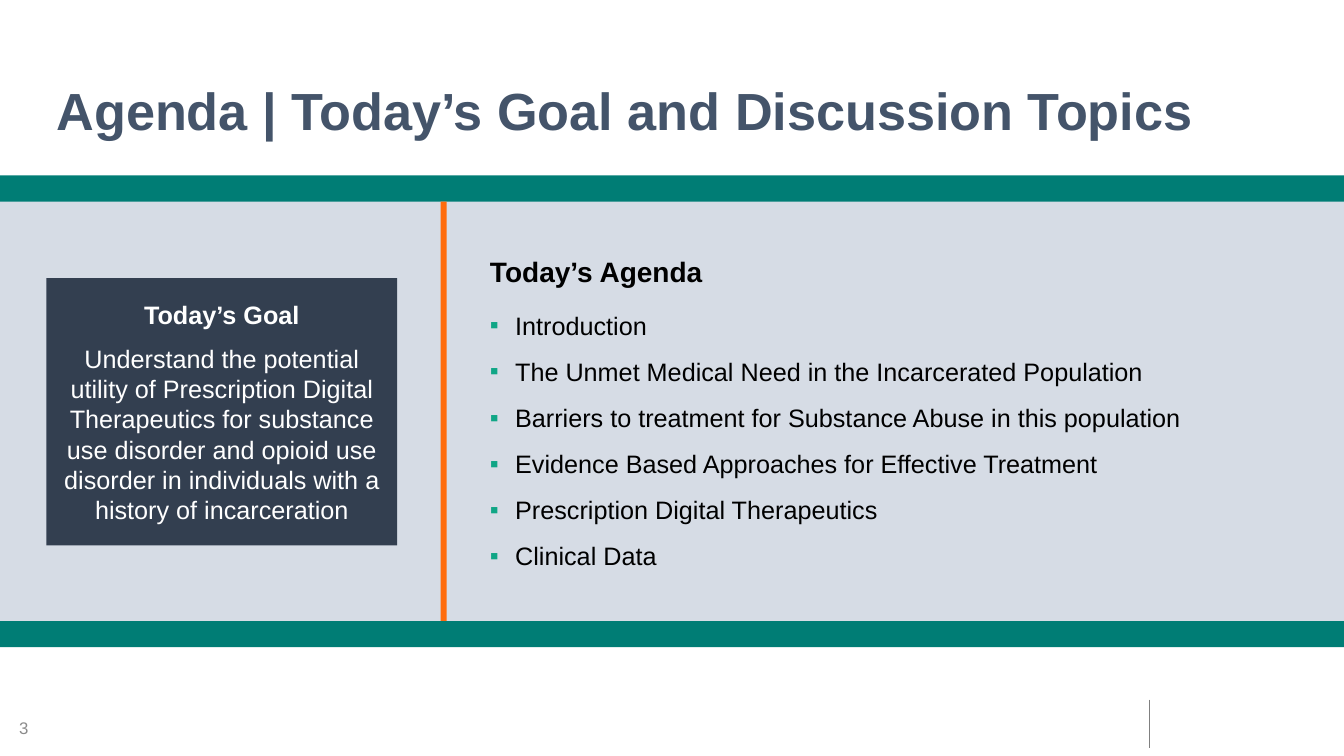
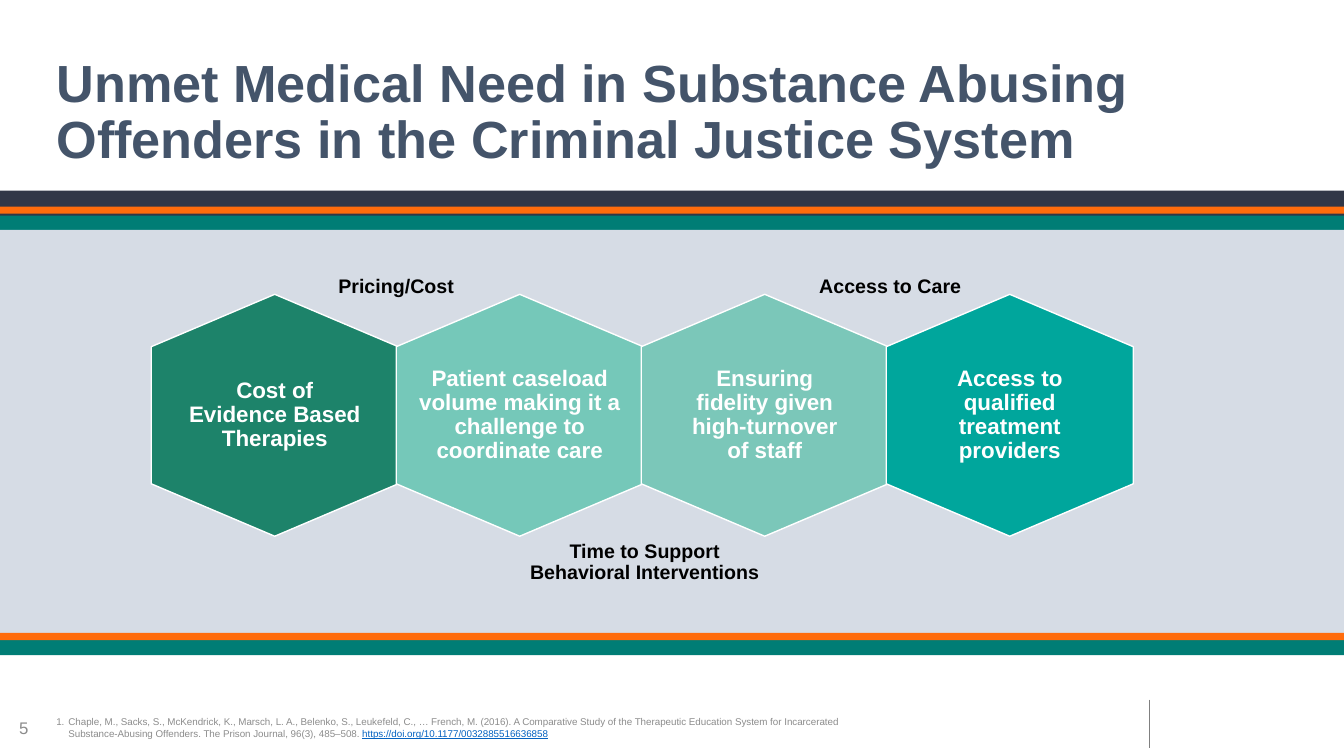
from dataclasses import dataclass
from typing import Optional

from lxml.etree import SubElement
from pptx import Presentation
from pptx.dml.color import RGBColor
from pptx.enum.shapes import MSO_CONNECTOR, MSO_SHAPE
from pptx.enum.text import MSO_ANCHOR, MSO_AUTO_SIZE, PP_ALIGN
from pptx.oxml.ns import qn
from pptx.util import Inches, Pt

FONT = "Arial"
TEAL = "007D75"
ORANGE = "FF6C0C"
NAVY = "313747"
GOAL_FILL = "333F50"
PANEL = "D6DCE5"
TITLE_COLOR = "44546A"
GRAY = "8C8C8C"
RULE_GRAY = "808080"
BULLET_GREEN = "10A686"
LINK_BLUE = "0563C1"
BLACK = "000000"
WHITE = "FFFFFF"

SLIDE_WIDTH = 13.33
HEXAGON_LEFT = 1.5
HEXAGON_TOP = 2.92
HEXAGON_STEP = 2.43
HEXAGON_WIDTH = 2.45
HEXAGON_HEIGHT = 2.4
HEXAGON_SHOULDER = 0.52

AGENDA_TOPICS = [
    "Introduction",
    "The Unmet Medical Need in the Incarcerated Population",
    "Barriers to treatment for Substance Abuse in this population",
    "Evidence Based Approaches for Effective Treatment",
    "Prescription Digital Therapeutics",
    "Clinical Data",
]
GOAL = (
    "Understand the potential utility of Prescription Digital Therapeutics for substance "
    "use disorder and opioid use disorder in individuals with a history of incarceration"
)
CITATION = (
    "Chaple, M., Sacks, S., McKendrick, K., Marsch, L. A., Belenko, S., Leukefeld, C., … "
    "French, M. (2016). A Comparative Study of the Therapeutic Education System for "
    "Incarcerated Substance-Abusing Offenders. The Prison Journal, 96(3), 485–508. "
)
CITATION_LINK = "https://doi.org/10.1177/0032885516636858"


@dataclass(frozen=True)
class Box:
    left: float
    top: float
    width: float
    height: float


@dataclass(frozen=True)
class Line:
    text: str
    size: float
    color: str
    bold: bool = False
    align: PP_ALIGN = PP_ALIGN.LEFT
    spacing: float = 1.0
    before: float = 0
    after: float = 0
    bullet: Optional[str] = None
    indent: float = 0


@dataclass(frozen=True)
class Band:
    top: float
    height: float
    color: str


@dataclass(frozen=True)
class Hexagon:
    text: str
    color: str
    inset: float = 0.37


@dataclass(frozen=True)
class Label:
    text: str
    box: Box


AGENDA_BANDS = [Band(1.74, 4.68, TEAL), Band(2, 4.16, PANEL)]
NEED_BANDS = [
    Band(2.06, 4.44, TEAL),
    Band(1.89, 0.25, NAVY),
    Band(2.05, 0.07, ORANGE),
    Band(2.28, 4.01, PANEL),
    Band(6.28, 0.07, ORANGE),
]
HEXAGONS = [
    Hexagon("Cost of Evidence Based Therapies", "1D836A"),
    Hexagon("Patient caseload volume making it a challenge to coordinate care", "75C8B9", 0.18),
    Hexagon("Ensuring fidelity given high-turnover of staff", "7BC7B9"),
    Hexagon("Access to qualified treatment providers", "00A69C"),
]
LABELS = [
    Label("Pricing/Cost", Box(2.36, 2.13, 3.14, 1.44)),
    Label("Access to Care", Box(7.31, 2.13, 3.04, 1.44)),
    Label("Time to Support Behavioral Interventions", Box(5.18, 4.86, 2.43, 1.44)),
]


def rgb(color: str) -> RGBColor:
    return RGBColor.from_string(color)


def place(shape, box: Box) -> None:
    shape.left, shape.top = Inches(box.left), Inches(box.top)
    shape.width, shape.height = Inches(box.width), Inches(box.height)


def add_bullet(paragraph, bullet: str, indent: float) -> None:
    properties = paragraph._p.get_or_add_pPr()
    properties.set("marL", str(Inches(indent)))
    properties.set("indent", str(-Inches(indent)))
    if bullet == "number":
        SubElement(properties, qn("a:buAutoNum"), type="arabicPeriod")
        return
    bullet_color = SubElement(properties, qn("a:buClr"))
    SubElement(bullet_color, qn("a:srgbClr"), val=BULLET_GREEN)
    SubElement(properties, qn("a:buFont"), typeface=FONT)
    SubElement(properties, qn("a:buChar"), char=bullet)


def write_text(shape, lines: list[Line], anchor=MSO_ANCHOR.MIDDLE,
               inset_x: float = 0.1, inset_y: float = 0.05) -> None:
    frame = shape.text_frame
    frame.word_wrap = True
    frame.auto_size = MSO_AUTO_SIZE.NONE
    frame.vertical_anchor = anchor
    frame.margin_left = frame.margin_right = Inches(inset_x)
    frame.margin_top = frame.margin_bottom = Inches(inset_y)
    for index, line in enumerate(lines):
        paragraph = frame.add_paragraph() if index else frame.paragraphs[0]
        paragraph.add_run().text = line.text
        if line.bullet:
            add_bullet(paragraph, line.bullet, line.indent)
        paragraph.alignment = line.align
        paragraph.line_spacing = line.spacing
        paragraph.space_before = Pt(line.before)
        paragraph.space_after = Pt(line.after)
        font = paragraph.font
        font.name, font.size, font.bold = FONT, Pt(line.size), line.bold
        font.color.rgb = rgb(line.color)


def add_text(slide, box: Box, lines: list[Line], anchor=MSO_ANCHOR.MIDDLE,
             inset_x: float = 0.1, inset_y: float = 0.05):
    shape = slide.shapes.add_textbox(0, 0, 0, 0)
    place(shape, box)
    write_text(shape, lines, anchor, inset_x, inset_y)
    return shape


def add_rectangle(slide, box: Box, color: str):
    shape = slide.shapes.add_shape(MSO_SHAPE.RECTANGLE, 0, 0, 0, 0)
    place(shape, box)
    shape.shadow.inherit = False
    shape.fill.solid()
    shape.fill.fore_color.rgb = rgb(color)
    shape.line.fill.background()
    return shape


def add_base_slide(presentation, title: str, number: int, bands: list[Band]):
    slide = presentation.slides.add_slide(presentation.slide_layouts[5])
    place(slide.shapes.title, Box(0.46, 0.4, 12.57, 1.45))
    write_text(slide.shapes.title, [Line(title, 37.3, TITLE_COLOR, True, spacing=0.9)])
    for band in bands:
        add_rectangle(slide, Box(0, band.top, SLIDE_WIDTH, band.height), band.color)
    add_text(slide, Box(0.09, 7.02, 0.99, 0.4), [Line(str(number), 12, GRAY)])
    rule = slide.shapes.add_connector(
        MSO_CONNECTOR.STRAIGHT, Inches(11.4), Inches(6.94), Inches(11.4), Inches(7.42))
    rule.line.color.rgb = rgb(RULE_GRAY)
    rule.line.width = Pt(1)
    SubElement(rule._element.spPr, qn("a:effectLst"))
    return slide


def add_hexagon(slide, left: float, hexagon: Hexagon) -> None:
    right, middle = left + HEXAGON_WIDTH, left + HEXAGON_WIDTH / 2
    bottom = HEXAGON_TOP + HEXAGON_HEIGHT
    upper, lower = HEXAGON_TOP + HEXAGON_SHOULDER, bottom - HEXAGON_SHOULDER
    corners = [(right, upper), (right, lower), (middle, bottom), (left, lower), (left, upper)]
    builder = slide.shapes.build_freeform(Inches(middle), Inches(HEXAGON_TOP))
    builder.add_line_segments([(Inches(x), Inches(y)) for x, y in corners], close=True)
    shape = builder.convert_to_shape()
    shape.shadow.inherit = False
    shape.fill.solid()
    shape.fill.fore_color.rgb = rgb(hexagon.color)
    shape.line.color.rgb = rgb(WHITE)
    shape.line.width = Pt(1)
    line = Line(hexagon.text, 16, WHITE, True, PP_ALIGN.CENTER, 0.9)
    write_text(shape, [line], inset_x=hexagon.inset, inset_y=0.41)


def build_agenda(presentation) -> None:
    slide = add_base_slide(
        presentation, "Agenda | Today’s Goal and Discussion Topics", 3, AGENDA_BANDS)
    topics = [Line(topic, 18, BLACK, before=5.3, after=6, bullet="▪", indent=0.25)
              for topic in AGENDA_TOPICS]
    heading = Line("Today’s Agenda", 20, BLACK, True, after=10)
    add_text(slide, Box(4.86, 2.53, 7.96, 3.1), [heading, *topics], MSO_ANCHOR.TOP, 0, 0)
    goal = add_rectangle(slide, Box(0.46, 2.76, 3.48, 2.65), GOAL_FILL)
    write_text(goal, [
        Line("Today’s Goal", 18, WHITE, True, PP_ALIGN.CENTER, after=10),
        Line(GOAL, 18, WHITE, align=PP_ALIGN.CENTER),
    ])
    add_rectangle(slide, Box(4.37, 2, 0.06, 4.16), ORANGE)


def build_unmet_need(presentation) -> None:
    slide = add_base_slide(
        presentation,
        "Unmet Medical Need in Substance Abusing Offenders in the Criminal Justice System",
        5, NEED_BANDS)
    for index, hexagon in enumerate(HEXAGONS):
        add_hexagon(slide, HEXAGON_LEFT + index * HEXAGON_STEP, hexagon)
    for label in LABELS:
        line = Line(label.text, 14, BLACK, True, PP_ALIGN.CENTER, 0.9)
        add_text(slide, label.box, [line], inset_x=0.07, inset_y=0.07)
    citation = add_text(slide, Box(0.46, 7.06, 8.42, 0.32),
                        [Line(CITATION, 7, GRAY, bullet="number", indent=0.12)])
    link = citation.text_frame.paragraphs[0].add_run()
    link.text = CITATION_LINK
    link.font.underline = True
    link.font.color.rgb = rgb(LINK_BLUE)


def main() -> None:
    presentation = Presentation()
    presentation.slide_width = Inches(SLIDE_WIDTH)
    presentation.slide_height = Inches(7.5)
    build_agenda(presentation)
    build_unmet_need(presentation)
    presentation.save("out.pptx")


if __name__ == "__main__":
    main()
